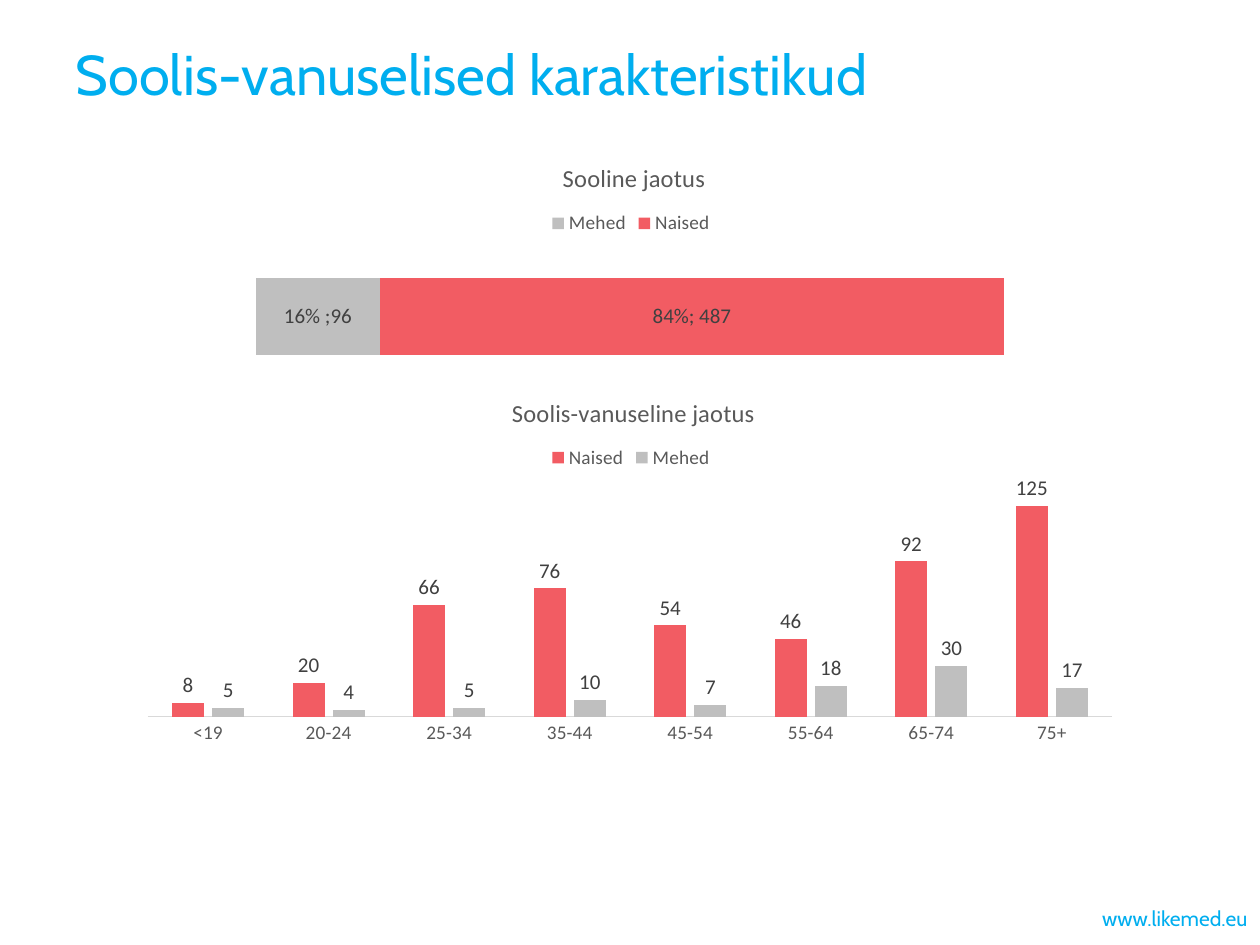
from lxml import etree
from pptx import Presentation
from pptx.chart.data import CategoryChartData
from pptx.dml.color import RGBColor
from pptx.enum.chart import XL_CHART_TYPE as CT, XL_LABEL_POSITION as LP
from pptx.enum.chart import XL_LEGEND_POSITION, XL_TICK_MARK
from pptx.enum.text import MSO_ANCHOR, PP_ALIGN
from pptx.oxml.ns import qn
from pptx.util import Pt

COLORS = {"brand": "00AEEF", "Naised": "F25C63", "Mehed": "BFBFBF",
          "text": "595959", "label": "404040", "axis": "D9D9D9"}
HEAD_FONT, CHART_FONT = "Cabin", "Calibri"


def rgb(name):
    """Return the named colour."""
    return RGBColor.from_string(COLORS[name])


def style(font, size, color, name=CHART_FONT):
    """Set the size, colour and typeface of a font."""
    font.size, font.name, font.bold = Pt(size), name, False
    font.color.rgb = rgb(color)


def write(tf, text, size=12, color="brand", font=HEAD_FONT, align=PP_ALIGN.LEFT):
    """Put one formatted paragraph in a text frame."""
    tf.word_wrap, tf.vertical_anchor = True, MSO_ANCHOR.MIDDLE
    p = tf.paragraphs[0]
    p.alignment = align
    r = p.add_run()
    r.text = text
    style(r.font, size, color, font)


def set_layout(parent, index, box, size, inner=False):
    """Fix a chart part at a box in points, as fractions of the chart size."""
    for old in parent.findall(qn("c:layout")):
        parent.remove(old)
    layout = etree.Element(qn("c:layout"))
    manual = etree.SubElement(layout, qn("c:manualLayout"))
    if inner:
        etree.SubElement(manual, qn("c:layoutTarget")).set("val", "inner")
    for key in ("xMode", "yMode"):
        etree.SubElement(manual, qn(f"c:{key}")).set("val", "edge")
    for key, value, full in zip("xywh", box, size * 2):
        etree.SubElement(manual, qn(f"c:{key}")).set("val", f"{value / full:.4f}")
    parent.insert(index, layout)


def add_bars(slide, box, kind, title, cats, series, gap, overlap, title_x, plot):
    """Add a bar chart with its title and legend above the plot box."""
    data = CategoryChartData()
    data.categories = cats
    for name, values in series:
        data.add_series(name, values)
    chart = slide.shapes.add_chart(kind, *map(Pt, box), data).chart
    style(chart.font, 10, "text")
    size = box[2:]

    chart.has_title = True
    write(chart.chart_title.text_frame, title, 14, "text", CHART_FONT, PP_ALIGN.CENTER)
    chart.chart_title.include_in_layout = False
    set_layout(chart.chart_title._element, 1, (title_x, 11.5), size)

    chart.has_legend = True
    chart.legend.position = XL_LEGEND_POSITION.TOP
    chart.legend.include_in_layout = False
    style(chart.legend.font, 11, "text")
    set_layout(chart.legend._element, 1, (size[0] / 2 - 48, 40), size)
    set_layout(chart._chartSpace.chart.plotArea, 0, plot, size, inner=True)

    chart.value_axis.has_major_gridlines = False
    chart.value_axis.visible = False
    bars = chart.plots[0]
    bars.gap_width, bars.overlap, bars.vary_by_categories = gap, overlap, False
    for s in bars.series:
        s.format.fill.solid()
        s.format.fill.fore_color.rgb = rgb(s.name)
        s.invert_if_negative = False
        s.data_labels.show_value = True
        style(s.data_labels.font, 12, "label")
    return chart


def add_gender_chart(slide, box):
    """Add the stacked bar with the split by gender."""
    chart = add_bars(slide, box, CT.BAR_STACKED_100, "Sooline jaotus", ["1"],
                     [("Mehed", [96]), ("Naised", [487])], 95, 100,
                     title_x=182, plot=(9.5, 60, 427.5, 86))
    chart.category_axis.visible = False
    for s, text in zip(chart.plots[0].series, ("16% ;96", "84%; 487")):
        label = s.points[0].data_label
        write(label.text_frame, text, 12, "label", CHART_FONT, PP_ALIGN.CENTER)
        label.position = LP.CENTER


def add_age_chart(slide, box):
    """Add the columns with the split by gender and age."""
    ages = ["<19", "20-24", "25-34", "35-44", "45-54", "55-64", "65-74", "75+"]
    chart = add_bars(slide, box, CT.COLUMN_CLUSTERED, "Soolis-vanuseline jaotus", ages,
                     [("Naised", [8, 20, 66, 76, 54, 46, 92, 125]),
                      ("Mehed", [5, 4, 5, 10, 7, 18, 30, 17])], 150, -25,
                     title_x=217.5, plot=(12, 62.5, 551, 135))
    chart.value_axis.minimum_scale, chart.value_axis.maximum_scale = 0, 140
    axis = chart.category_axis
    axis.major_tick_mark = axis.minor_tick_mark = XL_TICK_MARK.NONE
    axis.format.line.color.rgb = rgb("axis")
    axis.format.line.width = Pt(0.75)
    style(axis.tick_labels.font, 11, "text")
    for s in chart.plots[0].series:
        s.data_labels.position = LP.OUTSIDE_END


def add_title(slide, box):
    """Place and fill the slide title."""
    sp = slide.shapes.title
    sp.left, sp.top, sp.width, sp.height = map(Pt, box)
    write(sp.text_frame, "Soolis-vanuselised karakteristikud", 32)


def add_footer(slide, box):
    """Add the web address at the lower right."""
    sp = slide.shapes.add_textbox(*map(Pt, box))
    write(sp.text_frame, "www.likemed.eu", align=PP_ALIGN.RIGHT)


def main():
    """Build and save the slide."""
    prs = Presentation()
    prs.slide_width, prs.slide_height = Pt(720), Pt(540)
    slide = prs.slides.add_slide(prs.slide_layouts[5])
    add_title(slide, (36, 6, 648, 72))
    add_footer(slide, (492, 510, 228, 29))
    add_gender_chart(slide, (137, 78, 446, 149))
    add_age_chart(slide, (72.5, 212, 575, 219))
    prs.save("out.pptx")


if __name__ == "__main__":
    main()
